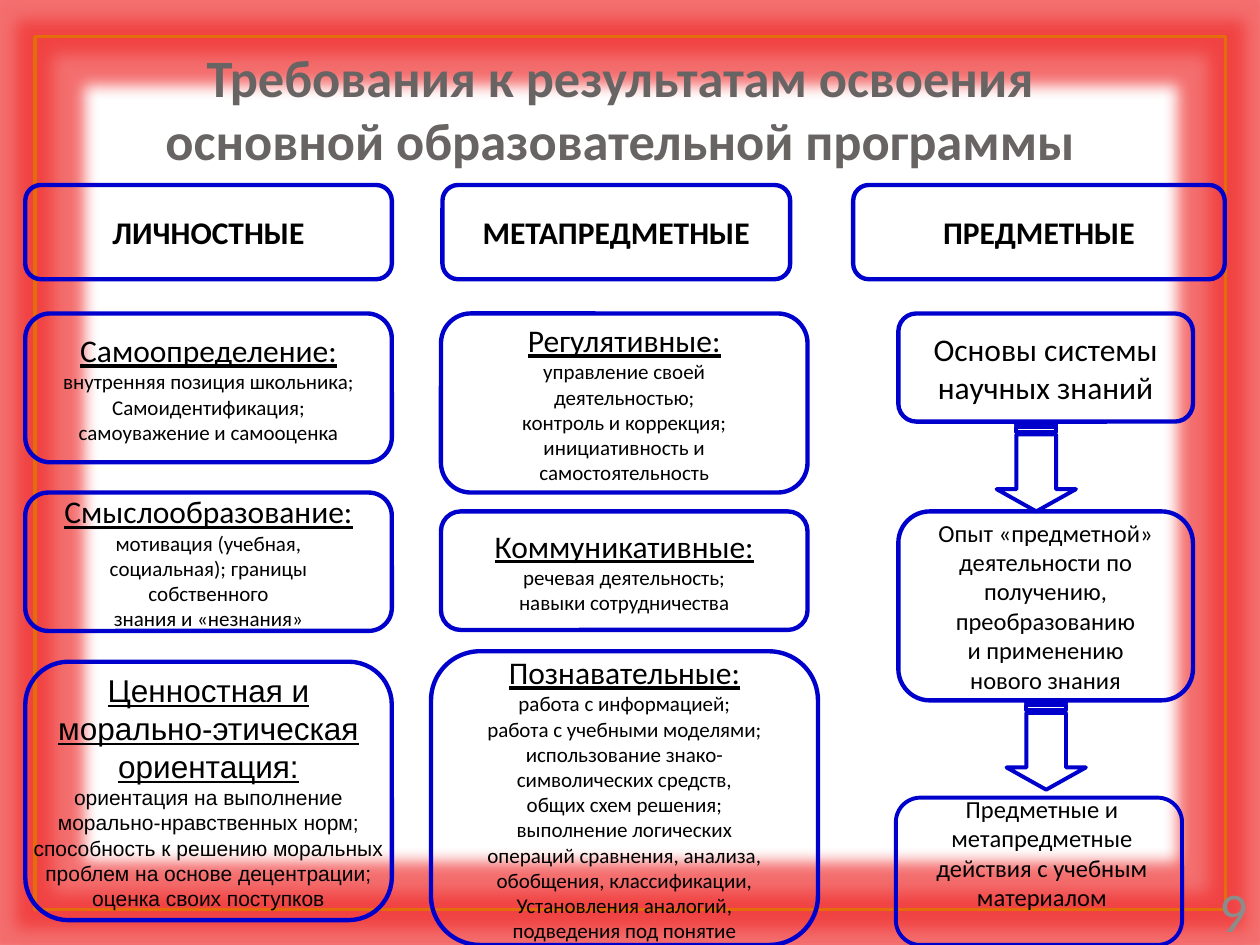
from lxml import etree
from pptx import Presentation
from pptx import util as u
from pptx.dml.color import RGBColor
from pptx.enum import shapes, text
from pptx.oxml.ns import qn

BLUE = RGBColor(0x00, 0x00, 0xCC)
ORANGE = RGBColor(0xE4, 0x6C, 0x0A)
BLACK = RGBColor(0x00, 0x00, 0x00)
TITLE_GREY = RGBColor(0x69, 0x64, 0x64)
NUMBER_GREY = RGBColor(0x8C, 0x8C, 0x8C)
GLOW_RED = RGBColor(0xF0, 0x30, 0x30)

# All places are (left, top, width, height) in centimetres.
FRAME = (0.71, 0.74, 24, 17.6)
TITLE = ["Требования к результатам освоения", "основной образовательной программы"]
TITLE_PLACE = (0.51, 0.79, 24, 2.82)
NUMBER_PLACE = (22.81, 17.65, 2.59, 1.4)

HEADER_TOP, HEADER_HEIGHT = 3.73, 1.9
HEADERS = [  # left, width, wording
    (0.51, 7.39, "ЛИЧНОСТНЫЕ"),
    (8.92, 7.01, "МЕТАПРЕДМЕТНЫЕ"),
    (17.2, 7.49, "ПРЕДМЕТНЫЕ"),
]

TOPICS = [  # place, font, underlined heading, details
    ((0.51, 6.32, 7.39, 3), "Calibri", ["Самоопределение:"],
     ["внутренняя позиция школьника;", "Самоидентификация;",
      "самоуважение и самооценка"]),
    ((0.51, 9.93, 7.39, 2.79), "Calibri", ["Смыслообразование:"],
     ["мотивация (учебная,", "социальная); границы", "собственного",
      "знания и «незнания»"]),
    ((0.51, 13.34, 7.39, 5.21), "Arial",
     ["Ценностная и", "морально-этическая", "ориентация:"],
     ["ориентация на выполнение", "морально-нравственных норм;",
      "способность к решению моральных", "проблем на основе децентрации;",
      "оценка своих поступков"]),
    ((8.89, 6.32, 7.39, 3.61), "Calibri", ["Регулятивные:"],
     ["управление своей", "деятельностью;", "контроль и коррекция;",
      "инициативность и", "самостоятельность"]),
    ((8.89, 10.31, 7.39, 2.39), "Calibri", ["Коммуникативные:"],
     ["речевая деятельность;", "навыки сотрудничества"]),
    ((8.69, 13.13, 7.8, 5.92), "Calibri", ["Познавательные:"],
     ["работа с информацией;", "работа с учебными моделями;",
      "использование знако-", "символических средств,", "общих схем решения;",
      "выполнение логических", "операций сравнения, анализа,",
      "обобщения, классификации,", "Установления аналогий,",
      "подведения под понятие"]),
]

STEPS = [  # place, size, lines
    ((18.11, 6.32, 5.94, 2.18), 18, ["Основы системы", "научных знаний"]),
    ((18.11, 10.31, 5.94, 3.81), 14,
     ["Опыт «предметной»", "деятельности по", "получению,", "преобразованию",
      "и применению", "нового знания"]),
]
LAST_STEP = ["Предметные и метапредметные действия с учебным материалом"]
LAST_STEP_TEXT_PLACE = (18.06, 15.88, 5.89, 2.62)
LAST_STEP_PLACE = (18.06, 16.08, 5.77, 2.97)
ARROW_PLACES = [(19.99, 8.61, 1.8, 1.6), (20.19, 14.22, 1.8, 1.6)]

prs = Presentation()
prs.slide_width, prs.slide_height = u.Cm(25.4), u.Cm(19.05)
slide = prs.slides.add_slide(prs.slide_layouts[6])


def add_outline(preset, place, colour=BLUE, weight=2.5):
    """Add an unfilled preset shape."""
    outline = slide.shapes.add_shape(preset, *map(u.Cm, place))
    outline.shadow.inherit = False
    outline.fill.background()
    outline.line.color.rgb = colour
    outline.line.width = u.Pt(weight)
    return outline


def write(holder, lines, size, font="Calibri", colour=BLACK, bold=False,
          underline=False, align=text.PP_ALIGN.CENTER):
    """Append lines as paragraphs, filling the first one if it is empty."""
    frame = holder.text_frame
    for line in lines:
        paragraph = frame.add_paragraph() if frame.text else frame.paragraphs[0]
        paragraph.text = line
        paragraph.alignment = align
        face = paragraph.font
        face.name, face.size, face.color.rgb = font, u.Pt(size), colour
        face.bold, face.underline = bold, underline


def add_box(place):
    box = add_outline(shapes.MSO_SHAPE.ROUNDED_RECTANGLE, place)
    box.text_frame.word_wrap = False
    box.text_frame.vertical_anchor = text.MSO_ANCHOR.MIDDLE
    return box


def add_label(place, anchor=text.MSO_ANCHOR.TOP):
    label = slide.shapes.add_textbox(*map(u.Cm, place))
    label.text_frame.word_wrap = True
    label.text_frame.vertical_anchor = anchor
    return label


def add_glow(shape, radius, colour, opacity):
    effects = shape._element.spPr.find(qn("a:effectLst"))
    glow = etree.SubElement(effects, qn("a:glow"), rad=str(u.Pt(radius)))
    tint = etree.SubElement(glow, qn("a:srgbClr"), val=str(colour))
    etree.SubElement(tint, qn("a:alpha"), val=str(opacity * 1000))


border = add_outline(shapes.MSO_SHAPE.RECTANGLE, FRAME, ORANGE, 2)
add_glow(border, 18, GLOW_RED, 70)

write(add_label(NUMBER_PLACE, text.MSO_ANCHOR.MIDDLE), ["9"], 32,
      colour=NUMBER_GREY, align=text.PP_ALIGN.RIGHT)

for left, width, wording in HEADERS:
    header = add_box((left, HEADER_TOP, width, HEADER_HEIGHT))
    write(header, [wording], 18, bold=True)

for place, font, heading, details in TOPICS:
    topic = add_box(place)
    write(topic, heading, 18, font, underline=True)
    write(topic, details, 12, font)

for place, size, lines in STEPS:
    write(add_box(place), lines, size)

write(add_label(LAST_STEP_TEXT_PLACE), LAST_STEP, 14)
add_outline(shapes.MSO_SHAPE.ROUNDED_RECTANGLE, LAST_STEP_PLACE, weight=2.25)

for place in ARROW_PLACES:
    arrow = add_outline(shapes.MSO_SHAPE.STRIPED_RIGHT_ARROW, place, weight=2.25)
    arrow.rotation = 90
    arrow.adjustments[0], arrow.adjustments[1] = 0.5, 0.28

write(add_label(TITLE_PLACE), TITLE, 30, colour=TITLE_GREY, bold=True)

prs.save("out.pptx")
